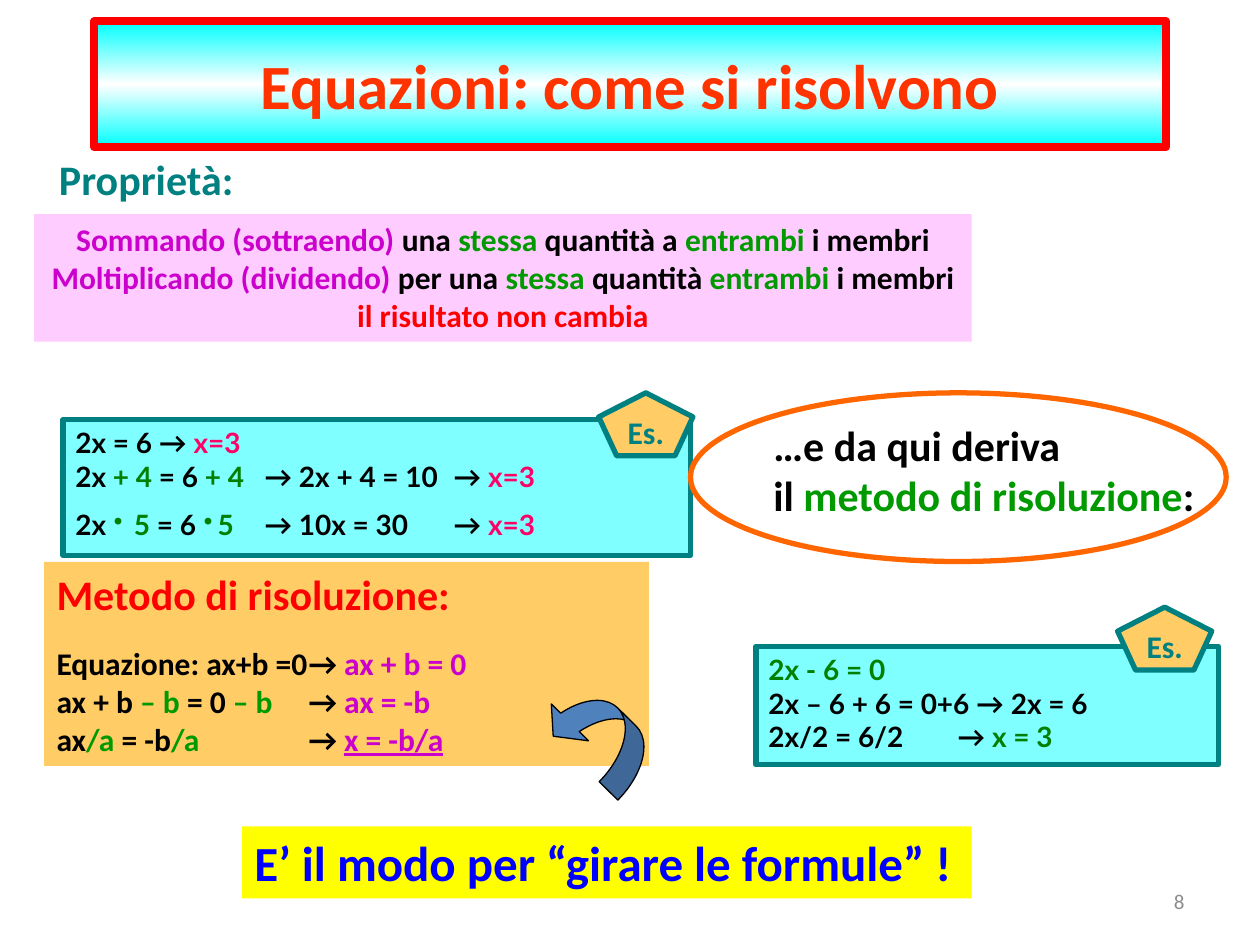
from copy import deepcopy

from lxml import etree
from pptx import Presentation, util as u
from pptx.dml.color import RGBColor
from pptx.enum import shapes, text
from pptx.oxml.ns import qn

COLOURS = {
    "black": "000000", "red": "FF0000", "title": "FF3300", "teal": "008080",
    "purple": "CC00CC", "green": "009900", "dark_green": "008000",
    "pink": "FF0066", "blue": "0000FF", "grey": "8C8C8C", "orange": "FF6600",
    "rose": "FFCCFF", "cyan": "00FFFF", "amber": "FFCC66", "yellow": "FFFF00",
    "steel": "4F81BD", "white": "FFFFFF",
}
SHAPE = shapes.MSO_SHAPE
ALIGN = text.PP_ALIGN
DOT = {"name": "Times New Roman", "size": u.Pt(24)}


def rgb(name):
    return RGBColor.from_string(COLOURS[name])


def place(*lengths):
    return [u.Cm(length) for length in lengths]


class LessonSlide:
    def __init__(self, slide):
        self.slide = slide
        self.base = {"name": "Calibri", "size": u.Pt(18), "bold": True}

    def put_text(self, shape, lines, align=ALIGN.LEFT, wrap=True, anchor="TOP",
                 tabs=(), **style):
        frame = shape.text_frame
        frame.word_wrap = wrap
        frame.vertical_anchor = text.MSO_ANCHOR[anchor]
        for number, line in enumerate(lines):
            paragraph = frame.paragraphs[0] if number == 0 else frame.add_paragraph()
            paragraph.alignment = align
            if tabs:
                stops = etree.SubElement(paragraph._p.get_or_add_pPr(), qn("a:tabLst"))
                for stop in tabs:
                    etree.SubElement(stops, qn("a:tab"), pos=str(u.Cm(stop)), algn="l")
            for words, colour, *own in line:
                run = paragraph.add_run()
                run.text = words
                run.font.color.rgb = rgb(colour)
                for key, value in {**self.base, **style, **(own[0] if own else {})}.items():
                    setattr(run.font, key, value)
        return frame

    def outline(self, shape, colour, width):
        if colour:
            shape.line.color.rgb = rgb(colour)
            shape.line.width = u.Pt(width)
        else:
            shape.line.fill.background()

    def figure(self, kind, box, fill=None, line=None, width=3, alpha=None):
        shape = self.slide.shapes.add_shape(kind, *place(*box))
        shape.shadow.inherit = False
        if fill:
            shape.fill.solid()
            shape.fill.fore_color.rgb = rgb(fill)
        else:
            shape.fill.background()
        if alpha:
            colour = shape._element.spPr.find(qn("a:solidFill"))[0]
            etree.SubElement(colour, qn("a:alpha"), val=str(alpha * 1000))
        self.outline(shape, line, width)
        return shape

    def panel(self, box, fill, lines, **style):
        return self.put_text(self.figure(SHAPE.RECTANGLE, box, fill), lines, **style)

    def example(self, box, badge_corner, lines):
        board = self.figure(SHAPE.RECTANGLE, box, "cyan", "teal", alpha=50)
        self.put_text(board, lines, name="Lato", size=u.Pt(16), tabs=(3.81, 7.62))
        badge = self.figure(SHAPE.REGULAR_PENTAGON, (*badge_corner, 1.9, 1.27), "amber", "teal")
        self.put_text(badge, [[("Es.", "teal")]], ALIGN.CENTER, wrap=False, anchor="MIDDLE")

    def label(self, box, lines, **style):
        self.put_text(self.slide.shapes.add_textbox(*place(*box)), lines, **style)

    def title(self, box, words):
        heading = self.slide.shapes.title
        heading.left, heading.top, heading.width, heading.height = place(*box)
        heading.fill.gradient()
        heading.fill.gradient_angle = 90
        stops = heading._element.spPr.find(qn("a:gradFill")).find(qn("a:gsLst"))
        stops.insert(1, deepcopy(stops[0]))
        for stop, position, colour in zip(
                heading.fill.gradient_stops, (0, 0.5, 1), ("cyan", "white", "cyan")):
            stop.position = position
            stop.color.rgb = rgb(colour)
        self.outline(heading, "red", 4.5)
        self.put_text(heading, [[(words, "title")]], ALIGN.CENTER, anchor="MIDDLE",
                      size=u.Pt(36))


def main():
    deck = Presentation()
    deck.slide_width, deck.slide_height = place(25.4, 19.05)
    lesson = LessonSlide(deck.slides.add_slide(deck.slide_layouts[5]))

    lesson.title((1.9, 0.43, 21.6, 2.54), "Equazioni: come si risolvono")
    lesson.label((0.94, 2.97, 4.06, 1.27), [[("Proprietà:", "teal")]], size=u.Pt(24))
    lesson.panel((0.69, 4.32, 18.9, 2.57), "rose", [
        [("Sommando (sottraendo) ", "purple"), ("una ", "black"), ("stessa ", "green"),
         ("quantità a ", "black"), ("entrambi ", "green"), ("i membri", "black")],
        [("Moltiplicando (dividendo)", "purple"), (" per una ", "black"), ("stessa ", "green"),
         ("quantità ", "black"), ("entrambi ", "green"), ("i membri", "black")],
        [("il risultato non cambia", "red")],
    ], align=ALIGN.CENTER)

    lesson.example((1.27, 8.46, 12.65, 2.74), (12.07, 7.92), [
        [("2x = 6 → ", "black"), ("x=3", "pink")],
        [("2x ", "black"), ("+ 4", "dark_green"), (" = 6 ", "black"), ("+ 4", "dark_green"),
         (" \t→ 2x + 4 = 10 \t→ ", "black"), ("x=3", "pink")],
        [("2x ", "black"), ("∙ ", "dark_green", DOT), ("5", "dark_green"), (" = 6 ", "black"),
         ("∙", "dark_green", DOT), (" ", "dark_green", {"size": u.Pt(10)}),
         ("5", "dark_green"), (" \t→ 10x = 30 \t→ ", "black"), ("x=3", "pink")],
    ])

    method = lesson.panel((0.89, 11.33, 12.19, 4.11), "amber", [
        [("Metodo di risoluzione:", "red", {"size": u.Pt(24)})],
        [("Equazione: ax+b =0\t→ ", "black"), ("ax + b = 0", "purple")],
        [("ax + b ", "black"), ("– b", "green"), (" = 0 ", "black"), ("– b \t", "green"),
         ("→ ", "black"), ("ax = -b", "purple")],
        [("ax", "black"), ("/a", "green"), (" = -b", "black"), ("/a \t\t", "green"),
         ("→ ", "black"), ("x = -b/a", "purple", {"underline": True})],
    ], tabs=(3.81, 5.08))
    method.paragraphs[1].space_before = u.Pt(14.5)

    lesson.example((15.24, 13.03, 9.32, 2.39), (22.53, 12.24), [
        [("2x - 6 = 0", "dark_green")],
        [("2x – 6 + 6 = 0+6 → 2x = 6", "black")],
        [("2x/2 = 6/2 \t→ ", "black"), ("x = 3", "dark_green")],
    ])

    lesson.label((15.34, 8.33, 9.09, 2.31), [
        [("…e da qui deriva", "black")],
        [("il ", "black"), ("metodo di risoluzione", "green"), (":", "black")],
    ], size=u.Pt(24))
    lesson.figure(SHAPE.OVAL, (13.92, 7.92, 10.8, 3.4), line="orange")

    lesson.panel((4.88, 16.66, 14.71, 1.45), "yellow",
                 [[("E’ il modo per “girare le formule” !", "blue")]], size=u.Pt(28))
    turn = lesson.figure(SHAPE.CURVED_UP_ARROW, (10.9, 14.17, 2.36, 1.32), "steel", "black", 0.75)
    turn.rotation = 224.7
    for index, value in enumerate((0.4, 0.8, 0.33)):
        turn.adjustments[index] = value

    lesson.label((18.21, 17.65, 5.92, 1.02), [[("8", "grey")]], align=ALIGN.RIGHT,
                 anchor="MIDDLE", size=u.Pt(12), bold=False)
    deck.save("out.pptx")


if __name__ == "__main__":
    main()
